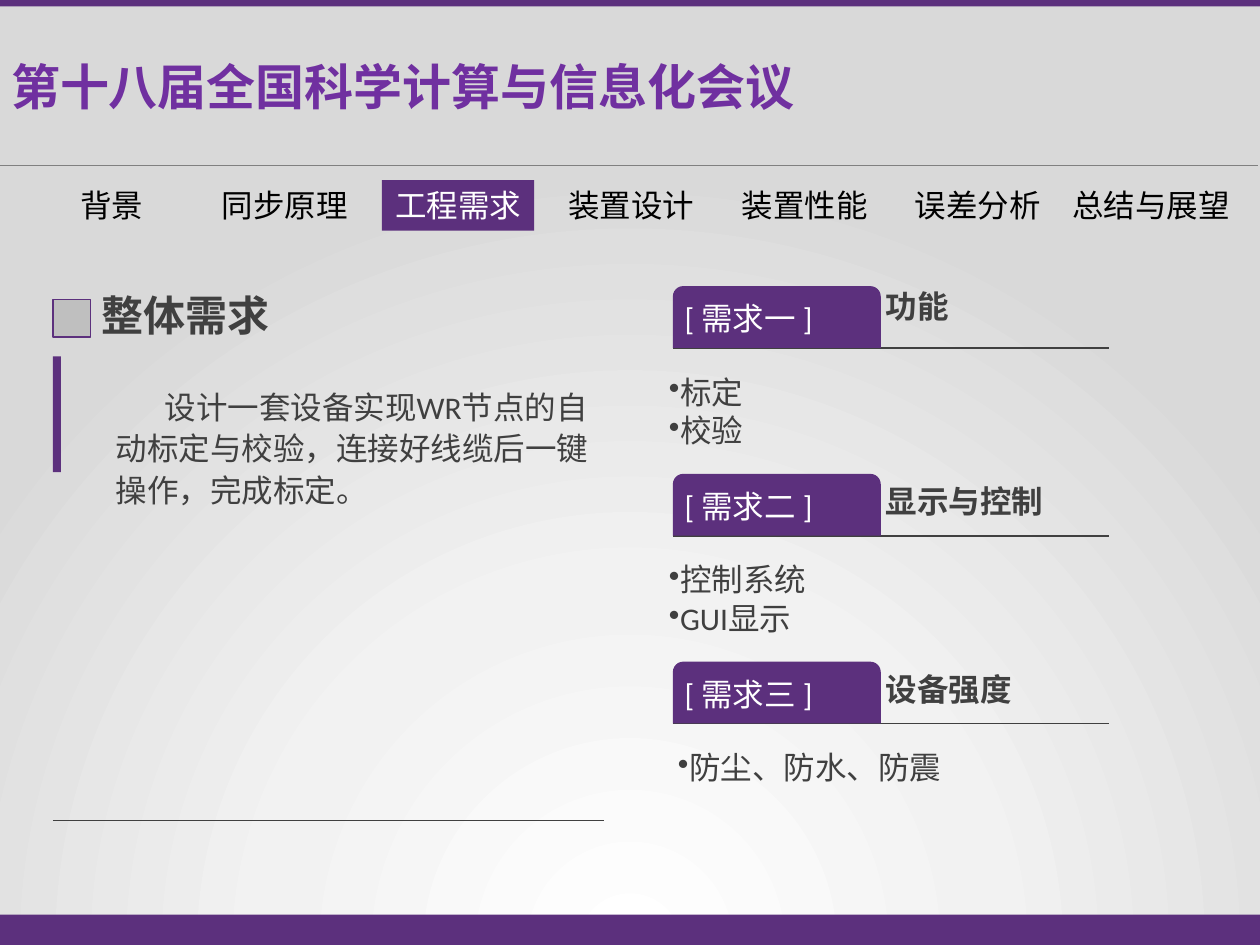
from dataclasses import dataclass

from lxml import etree
from pptx import Presentation
from pptx.dml.color import RGBColor
from pptx.enum.shapes import MSO_CONNECTOR, MSO_SHAPE
from pptx.enum.text import MSO_ANCHOR, PP_ALIGN
from pptx.oxml.ns import qn
from pptx.util import Pt

PURPLE = RGBColor(0x5C, 0x30, 0x7D)
TITLE_PURPLE = RGBColor(0x70, 0x30, 0xA0)
DARK = RGBColor(0x40, 0x40, 0x40)
GRAY = RGBColor(0x80, 0x80, 0x80)
SILVER = RGBColor(0xBF, 0xBF, 0xBF)
BLACK = RGBColor(0, 0, 0)
WHITE = RGBColor(0xFF, 0xFF, 0xFF)
BACKGROUND_STOPS = [(0, "FFFFFF"), (46, "F2F2F2"), (100, "D9D9D9")]

RECTANGLE = MSO_SHAPE.RECTANGLE
TAB_SHAPE = MSO_SHAPE.ROUND_2_SAME_RECTANGLE
STRAIGHT = MSO_CONNECTOR.STRAIGHT
TOP, MIDDLE, BOTTOM = MSO_ANCHOR.TOP, MSO_ANCHOR.MIDDLE, MSO_ANCHOR.BOTTOM
LEFT, CENTER = PP_ALIGN.LEFT, PP_ALIGN.CENTER

WIDTH, HEIGHT = 720, 540
NAV_CENTER, NAV_STEP, NAV_TOP, NAV_HEIGHT = 63.7, 99, 103, 28.8
NAV_LABELS = ["背景", "同步原理", "工程需求", "装置设计", "装置性能", "误差分析", "总结与展望"]
ACTIVE_LABEL = "工程需求"
TAB_LEFT, TAB_TOP, TAB_WIDTH, TAB_HEIGHT, TAB_STEP = 384.5, 163.5, 118.8, 35.3, 107.3


@dataclass(frozen=True)
class Box:
    left: float
    top: float
    width: float
    height: float

    def lengths(self):
        return Pt(self.left), Pt(self.top), Pt(self.width), Pt(self.height)


@dataclass(frozen=True)
class TextStyle:
    color: RGBColor = DARK
    size: float = 18
    bold: bool = False
    font: str = "Calibri"
    align: PP_ALIGN = LEFT
    anchor: MSO_ANCHOR = TOP
    insets: tuple = (7.2, 3.6, 7.2, 3.6)
    wrap: bool = True
    line_spacing: float = 1.0
    space_after: float = 0
    first_indent: float = 0
    bullet: bool = False


@dataclass(frozen=True)
class Requirement:
    label: str
    heading: str
    items: tuple
    heading_rise: float = 5.8
    items_left: float = 379.4


SMALL_INSETS = (2.9, 2.9, 2.9, 2.9)
TAB_STYLE = TextStyle(WHITE, anchor=MIDDLE, insets=(5, 5, 5, 2.9), line_spacing=0.9,
                      space_after=6.3)
HEADING_STYLE = TextStyle(bold=True, anchor=BOTTOM, insets=SMALL_INSETS, line_spacing=0.9,
                          space_after=6.3)
ITEM_STYLE = TextStyle(insets=SMALL_INSETS, line_spacing=0.9, space_after=2.7,
                       first_indent=-18, bullet=True)
REQUIREMENTS = [
    Requirement("[ 需求一 ]", "功能", ("标定", "校验"), heading_rise=10.1),
    Requirement("[ 需求二 ]", "显示与控制", ("控制系统", "GUI显示")),
    Requirement("[ 需求三 ]", "设备强度", ("防尘、防水、防震",), items_left=384.5),
]


def set_background(slide) -> None:
    """Fill the background with a circular gradient centred below the slide."""
    slide.background.fill.gradient()
    gradient = slide.element.find(".//" + qn("a:gradFill"))
    for child in list(gradient):
        gradient.remove(child)
    stops = etree.SubElement(gradient, qn("a:gsLst"))
    for position, color in BACKGROUND_STOPS:
        stop = etree.SubElement(stops, qn("a:gs"), pos=str(position * 1000))
        etree.SubElement(stop, qn("a:srgbClr"), val=color)
    circle = etree.SubElement(gradient, qn("a:path"), path="circle")
    etree.SubElement(circle, qn("a:fillToRect"), l="50000", t="130000", r="50000", b="-30000")


def write_text(shape, lines: tuple, style: TextStyle) -> None:
    frame = shape.text_frame
    frame.word_wrap = style.wrap
    frame.vertical_anchor = style.anchor
    (frame.margin_left, frame.margin_top,
     frame.margin_right, frame.margin_bottom) = map(Pt, style.insets)
    for index, line in enumerate(lines):
        paragraph = frame.add_paragraph() if index else frame.paragraphs[0]
        paragraph.alignment = style.align
        paragraph.line_spacing = style.line_spacing
        paragraph.space_after = Pt(style.space_after)
        properties = paragraph._p.get_or_add_pPr()
        properties.set("marL", "0")
        properties.set("indent", str(Pt(style.first_indent)))
        if style.bullet:
            etree.SubElement(properties, qn("a:buChar"), char="•")
        run = paragraph.add_run()
        run.text = line
        run.font.name = style.font
        run.font.size = Pt(style.size)
        run.font.bold = style.bold
        run.font.color.rgb = style.color


def add_text(slide, box: Box, lines: tuple, style: TextStyle) -> None:
    write_text(slide.shapes.add_textbox(*box.lengths()), lines, style)


def add_block(slide, box: Box, fill: RGBColor = PURPLE, kind: MSO_SHAPE = RECTANGLE):
    shape = slide.shapes.add_shape(kind, *box.lengths())
    shape.shadow.inherit = False
    shape.fill.solid()
    shape.fill.fore_color.rgb = fill
    shape.line.fill.background()
    return shape


def add_rule(slide, left: float, right: float, y: float, color: RGBColor, weight: float) -> None:
    rule = slide.shapes.add_connector(STRAIGHT, Pt(left), Pt(y), Pt(right), Pt(y))
    rule.line.color.rgb = color
    rule.line.width = Pt(weight)
    etree.SubElement(rule._element.spPr, qn("a:effectLst"))


def add_navigation(slide) -> None:
    for index, label in enumerate(NAV_LABELS):
        width = 18 * len(label) + 15
        box = Box(NAV_CENTER + index * NAV_STEP - width / 2, NAV_TOP, width, NAV_HEIGHT)
        active = label == ACTIVE_LABEL
        style = TextStyle(WHITE if active else BLACK, font="Noto Sans CJK SC",
                          align=CENTER, wrap=False)
        if active:
            write_text(add_block(slide, box), (label,), style)
        else:
            add_text(slide, box, (label,), style)


def add_requirement(slide, requirement: Requirement, top: float) -> None:
    add_rule(slide, TAB_LEFT, 633.6, top + TAB_HEIGHT, DARK, 1)
    tab = add_block(slide, Box(TAB_LEFT, top, TAB_WIDTH, TAB_HEIGHT), kind=TAB_SHAPE)
    write_text(tab, (requirement.label,), TAB_STYLE)
    heading_box = Box(TAB_LEFT + TAB_WIDTH, top - requirement.heading_rise, 131, TAB_HEIGHT)
    add_text(slide, heading_box, (requirement.heading,), HEADING_STYLE)
    items_box = Box(requirement.items_left, top + 49, 267, 54)
    add_text(slide, items_box, requirement.items, ITEM_STYLE)


def add_overview(slide) -> None:
    marker = add_block(slide, Box(30.2, 171.2, 21.6, 21.6), SILVER)
    marker.line.color.rgb = PURPLE
    marker.line.width = Pt(1)
    add_block(slide, Box(30.2, 203.6, 4.6, 66.2))
    add_text(slide, Box(51.1, 162, 314.6, 36), ("整体需求",), TextStyle(size=24, bold=True))
    add_text(slide, Box(59, 216, 300.2, 79.2),
             ("设计一套设备实现WR节点的自动标定与校验，连接好线缆后一键操作，完成标定。",),
             TextStyle(line_spacing=1.1, first_indent=28))
    add_rule(slide, 30.2, 344.9, 468.7, DARK, 0.5)


def main() -> None:
    presentation = Presentation()
    presentation.slide_width, presentation.slide_height = Pt(WIDTH), Pt(HEIGHT)
    slide = presentation.slides.add_slide(presentation.slide_layouts[6])
    set_background(slide)
    add_block(slide, Box(0, 0, WIDTH, 3.6))
    add_block(slide, Box(0, 522.7, WIDTH, 17.3))
    add_rule(slide, 0, WIDTH - 1, 94.3, GRAY, 0.5)
    add_text(slide, Box(-0.7, 28.8, 494, 41), ("第十八届全国科学计算与信息化会议",),
             TextStyle(TITLE_PURPLE, size=28, bold=True))
    add_navigation(slide)
    add_overview(slide)
    for index, requirement in enumerate(REQUIREMENTS):
        add_requirement(slide, requirement, TAB_TOP + index * TAB_STEP)
    presentation.save("out.pptx")


if __name__ == "__main__":
    main()
